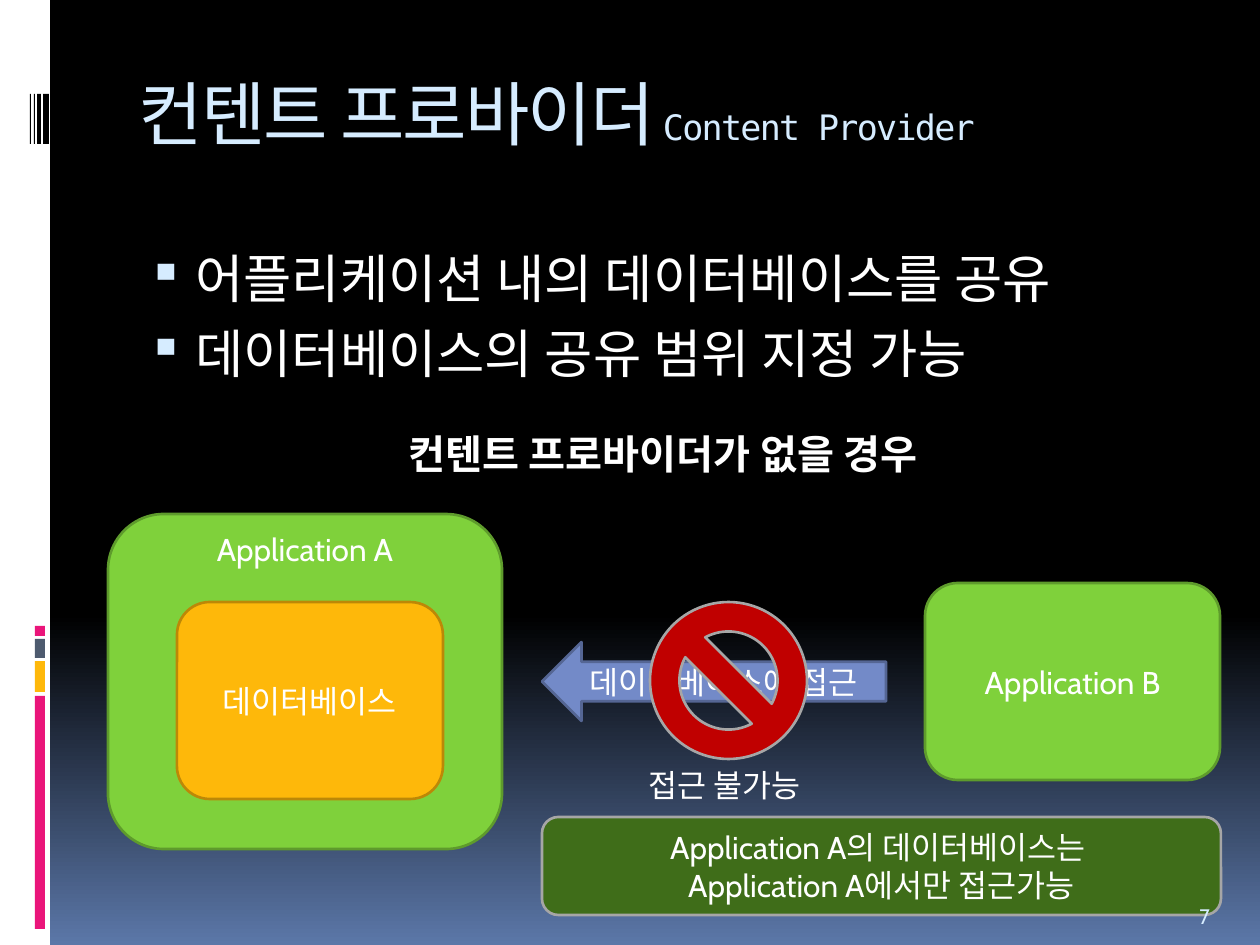
from lxml import etree
from pptx import Presentation
from pptx.dml.color import RGBColor
from pptx.enum.shapes import MSO_SHAPE
from pptx.enum.text import MSO_ANCHOR, MSO_AUTO_SIZE, PP_ALIGN
from pptx.oxml.ns import qn
from pptx.util import Emu, Pt

RECT, ROUNDED = MSO_SHAPE.RECTANGLE, MSO_SHAPE.ROUNDED_RECTANGLE
LEFT_ARROW, NO_SYMBOL = MSO_SHAPE.LEFT_ARROW, MSO_SHAPE.NO_SYMBOL
TOP, MIDDLE, BOTTOM = MSO_ANCHOR.TOP, MSO_ANCHOR.MIDDLE, MSO_ANCHOR.BOTTOM
LEFT, CENTER = PP_ALIGN.LEFT, PP_ALIGN.CENTER

PX = 914400 / 126
BODY_FONT, TITLE_FONT = "Cabin", "DejaVu Sans Mono"
WHITE, BLACK, PALE, PINK = "FFFFFF", "000000", "D6ECFF", "EA157A"
GREEN, AMBER, GREY = "7FD13B", "FEB80A", "A6A6A6"
BACKGROUND = [(0.65, BLACK), (1, "5B77A8")]

SIDE_BARS = [
    ((0, 0, 50, 945), WHITE),
    ((35, 696, 10, 233), PINK),
    ((35, 661, 10, 31), AMBER),
    ((35, 639, 10, 19), "4E5B6F"),
    ((35, 626, 10, 10), PINK),
    ((43, 94, 6, 50), BLACK),
    ((37, 94, 4, 50), BLACK),
    ((34, 94, 1, 50), BLACK),
    ((30, 94, 1, 50), BLACK),
]
TITLE_BOX = (126, 71, 1071, 126)
TITLE_RUNS = [("컨텐트 프로바이더", 40), (" Content Provider", 20)]
BULLETS_BOX = (126, 246, 1071, 168)
BULLETS = ["어플리케이션 내의 데이터베이스를 공유", "데이터베이스의 공유 범위 지정 가능"]
LABELS = [
    ((396, 423, 578, 62), "컨텐트 프로바이더가 없을 경우", 23, True),
    ((636, 760, 190, 50), "접근 불가능", 18, False),
]
DIAGRAM = [
    (ROUNDED, (108, 514, 394, 335), GREEN, "5E9B2C", ["Application A"], TOP),
    (ROUNDED, (925, 583, 295, 197), GREEN, "5E9B2C", ["Application B"], MIDDLE),
    (ROUNDED, (177, 602, 266, 197), AMBER, "BC8807", ["데이터베이스"], MIDDLE),
    (LEFT_ARROW, (542, 642, 344, 79), "738AC8", "556694", ["데이터베이스에 접근"], MIDDLE),
    (NO_SYMBOL, (650, 602, 157, 157), "C00000", GREY, [], MIDDLE),
    (ROUNDED, (542, 817, 679, 98), "3F6D19", GREY,
     ["Application A의 데이터베이스는 ", "Application A에서만 접근가능"], MIDDLE),
]
PAGE_BOX = (1187, 885, 63, 50)


def px(value):
    return Emu(round(value * PX))


def place(box):
    return [px(value) for value in box]


def color(value):
    return RGBColor.from_string(value)


def apply(target, formats):
    for key, value in formats.items():
        setattr(target, key, value)


def write_run(paragraph, text, size, hue=WHITE, font=BODY_FONT, bold=False):
    run = paragraph.add_run()
    run.text = text
    apply(run.font, {"size": Pt(size), "name": font, "bold": bold})
    run.font.color.rgb = color(hue)
    return run


def write_lines(frame, lines, size, align=LEFT, hue=WHITE, bold=False):
    for index, line in enumerate(lines):
        paragraph = frame.add_paragraph() if index else frame.paragraphs[0]
        paragraph.alignment = align
        write_run(paragraph, line, size, hue, bold=bold)


def add_text(slide, box, lines, size, frame_format, **style):
    frame = slide.shapes.add_textbox(*place(box)).text_frame
    apply(frame, frame_format)
    write_lines(frame, lines, size, **style)
    return frame


def add_block(slide, kind, box, fill, outline=None):
    block = slide.shapes.add_shape(kind, *place(box))
    block.shadow.inherit = False
    block.fill.solid()
    block.fill.fore_color.rgb = color(fill)
    if outline:
        block.line.color.rgb = color(outline)
        block.line.width = Pt(1.5)
    else:
        block.line.fill.background()
    return block


def add_bullet(paragraph):
    paragraph.space_before = Pt(7)
    properties = paragraph._p.get_or_add_pPr()
    properties.set("marL", str(px(57)))
    properties.set("indent", str(px(-48)))
    bullet_color = etree.SubElement(properties, qn("a:buClr"))
    etree.SubElement(bullet_color, qn("a:srgbClr"), val=PALE)
    etree.SubElement(properties, qn("a:buSzPct"), val="95000")
    etree.SubElement(properties, qn("a:buChar"), char="▪")


def paint_background(slide):
    fill = slide.background.fill
    fill.gradient()
    fill.gradient_angle = 270
    for stop, (position, hue) in zip(fill.gradient_stops, BACKGROUND):
        stop.position = position
        stop.color.rgb = color(hue)


def write_title(title):
    apply(title, dict(zip(("left", "top", "width", "height"), place(TITLE_BOX))))
    apply(title.text_frame, {"vertical_anchor": TOP, "margin_top": 0, "word_wrap": True,
                             "auto_size": MSO_AUTO_SIZE.NONE})
    paragraph = title.text_frame.paragraphs[0]
    paragraph.alignment = LEFT
    for text, size in TITLE_RUNS:
        run = write_run(paragraph, text, size, PALE, TITLE_FONT)
        run.font._element.set("spc", "-100")


def main():
    deck = Presentation()
    apply(deck, {"slide_width": px(1260), "slide_height": px(945)})
    slide = deck.slides.add_slide(deck.slide_layouts[5])
    paint_background(slide)
    for box, fill in SIDE_BARS:
        add_block(slide, RECT, box, fill)
    write_title(slide.shapes.title)

    bullets = add_text(slide, BULLETS_BOX, BULLETS, 30, {"word_wrap": True, "margin_top": 0})
    for paragraph in bullets.paragraphs:
        add_bullet(paragraph)

    for kind, box, fill, outline, lines, anchor in DIAGRAM:
        frame = add_block(slide, kind, box, fill, outline).text_frame
        apply(frame, {"vertical_anchor": anchor, "word_wrap": True})
        if anchor == TOP:
            frame.margin_top = 0
        write_lines(frame, lines, 18, CENTER)

    for box, text, size, bold in LABELS:
        add_text(slide, box, [text], size,
                 {"word_wrap": False, "auto_size": MSO_AUTO_SIZE.SHAPE_TO_FIT_TEXT}, bold=bold)
    add_text(slide, PAGE_BOX, ["7"], 12, {"word_wrap": True, "vertical_anchor": BOTTOM}, hue=PALE)
    deck.save("out.pptx")


if __name__ == "__main__":
    main()
